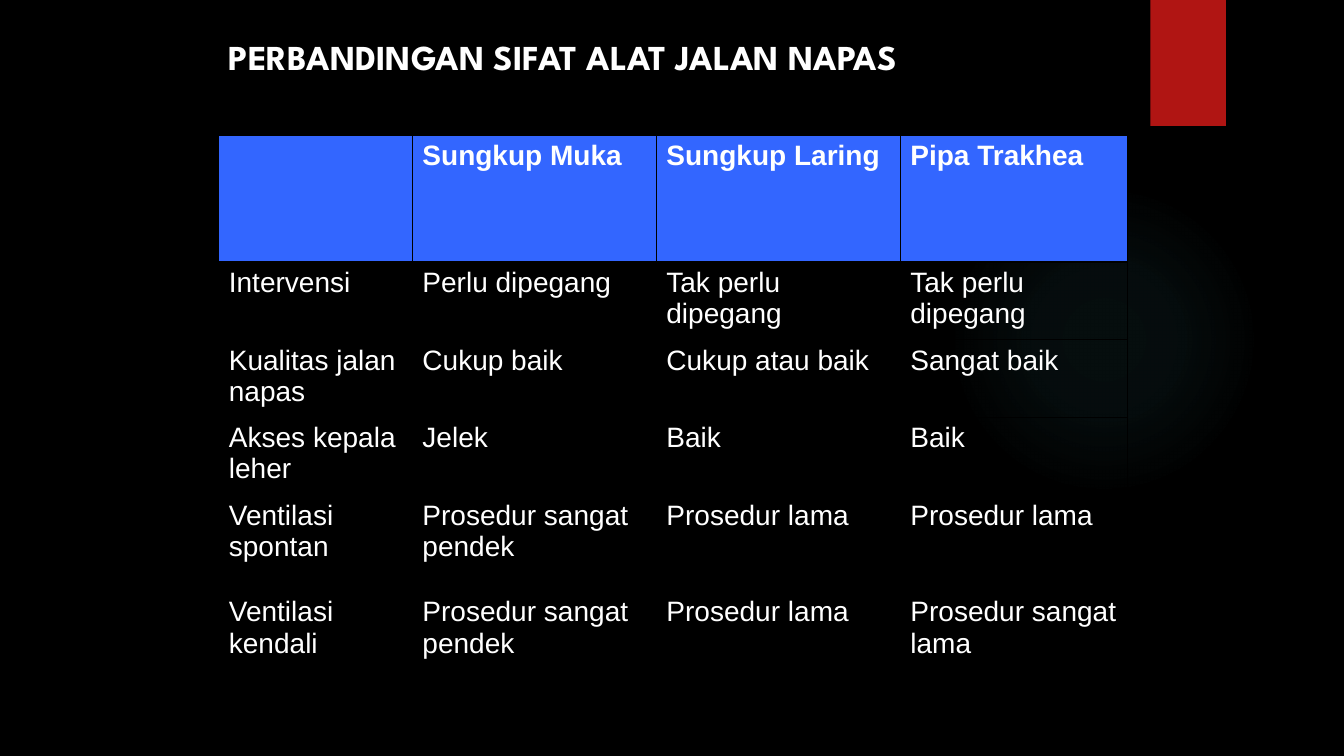
from lxml.etree import SubElement as Sub
from pptx import Presentation
from pptx.dml.color import RGBColor as RGB
from pptx.enum.shapes import MSO_SHAPE as Shape
from pptx.enum.text import MSO_ANCHOR as Anchor, PP_ALIGN as Align
from pptx.oxml.ns import qn
from pptx.util import Inches, Pt

HUES = {"black": "000000", "white": "FFFFFF", "blue": "3366FF",
        "red": "B01513", "teal": "50B9C1"}
GLOW = [(0, 7), (36, 6), (69, 0), (100, 0)]
COLS = [1.92, 2.42, 2.42, 2.25]
ROWS = [1.26, 0.77, 0.77, 0.77, 0.96, 0.96]
CELLS = [
    ["", "Sungkup Muka", "Sungkup Laring", "Pipa Trakhea"],
    ["Intervensi", "Perlu dipegang", "Tak perlu dipegang", "Tak perlu dipegang"],
    ["Kualitas jalan napas", "Cukup baik", "Cukup atau baik", "Sangat baik"],
    ["Akses kepala leher", "Jelek", "Baik", "Baik"],
    ["Ventilasi spontan", "Prosedur sangat pendek", "Prosedur lama", "Prosedur lama"],
    ["Ventilasi kendali", "Prosedur sangat pendek", "Prosedur lama",
     "Prosedur sangat lama"],
]


class Deck:
    """Holds the style and the current slide."""

    def __init__(self, prs):
        self.slide = prs.slides.add_slide(prs.slide_layouts[5])
        self.paint(self.slide.background.fill, "black")

    def paint(self, fill, hue):
        fill.solid()
        fill.fore_color.rgb = RGB.from_string(HUES[hue])

    def shape(self, kind, *box):
        item = self.slide.shapes.add_shape(kind, *map(Inches, box))
        item.shadow.inherit = False
        item.line.fill.background()
        return item

    def block(self, hue, *box):
        self.paint(self.shape(Shape.RECTANGLE, *box).fill, hue)

    def glow(self, hue, stops, *box):
        item = self.shape(Shape.OVAL, *box)
        item.fill.gradient()
        grad = item._element.spPr.find(qn("a:gradFill"))
        for child in list(grad):
            grad.remove(child)
        marks = Sub(grad, qn("a:gsLst"))
        for pos, alpha in stops:
            mark = Sub(marks, qn("a:gs"), pos=str(pos * 1000))
            tone = Sub(mark, qn("a:srgbClr"), val=HUES[hue])
            Sub(tone, qn("a:alpha"), val=str(alpha * 1000))
        route = Sub(grad, qn("a:path"), path="circle")
        Sub(route, qn("a:fillToRect"), **dict.fromkeys("ltrb", "50000"))

    def text(self, para, words, size, face, bold):
        run = para.add_run()
        run.text = words
        font = run.font
        font.size, font.name, font.bold = Pt(size), face, bold
        font.color.rgb = RGB.from_string(HUES["white"])

    def title(self, words, *box):
        item = self.slide.shapes.title
        item.left, item.top, item.width, item.height = map(Inches, box)
        frame = item.text_frame
        frame.word_wrap = True
        frame.vertical_anchor = Anchor.TOP
        para = frame.paragraphs[0]
        para.alignment = Align.LEFT
        self.text(para, words, 25, "League Spartan", True)

    def edges(self, cell, top, low):
        props = cell._tc.get_or_add_tcPr()
        for side, wide in zip("LRTB", (0.75, 0.75, top, low)):
            line = Sub(props, qn(f"a:ln{side}"), w=str(int(Pt(wide))))
            Sub(Sub(line, qn("a:solidFill")), qn("a:srgbClr"), val=HUES["black"])

    def table(self, rows, wide, high, left, top):
        box = map(Inches, (left, top, sum(wide), sum(high)))
        grid = self.slide.shapes.add_table(len(rows), len(wide), *box).table
        grid.first_row = grid.horz_banding = False
        for col, size in zip(grid.columns, wide):
            col.width = Inches(size)
        for r, (row, size) in enumerate(zip(rows, high)):
            grid.rows[r].height = Inches(size)
            head = r == 0
            for c, words in enumerate(row):
                cell = grid.cell(r, c)
                self.edges(cell, 2 if r < 2 else 1, 2 if head else 1)
                if head:
                    self.paint(cell.fill, "blue")
                else:
                    cell.fill.background()
                if words:
                    para = cell.text_frame.paragraphs[0]
                    para.alignment = Align.JUSTIFY if head else Align.LEFT
                    self.text(para, words, 20, "Arial", head)


def main():
    prs = Presentation()
    prs.slide_width, prs.slide_height = Inches(13.33), Inches(7.5)
    deck = Deck(prs)
    deck.glow("teal", GLOW, 9.41, 1.83, 3.08, 3.08)
    deck.block("red", 11.41, 0, 0.75, 1.25)
    deck.title("PERBANDINGAN SIFAT ALAT JALAN NAPAS", 2.17, 0.3, 9, 1.03)
    deck.table(CELLS, COLS, ROWS, 2.17, 1.34)
    prs.save("out.pptx")


if __name__ == "__main__":
    main()
